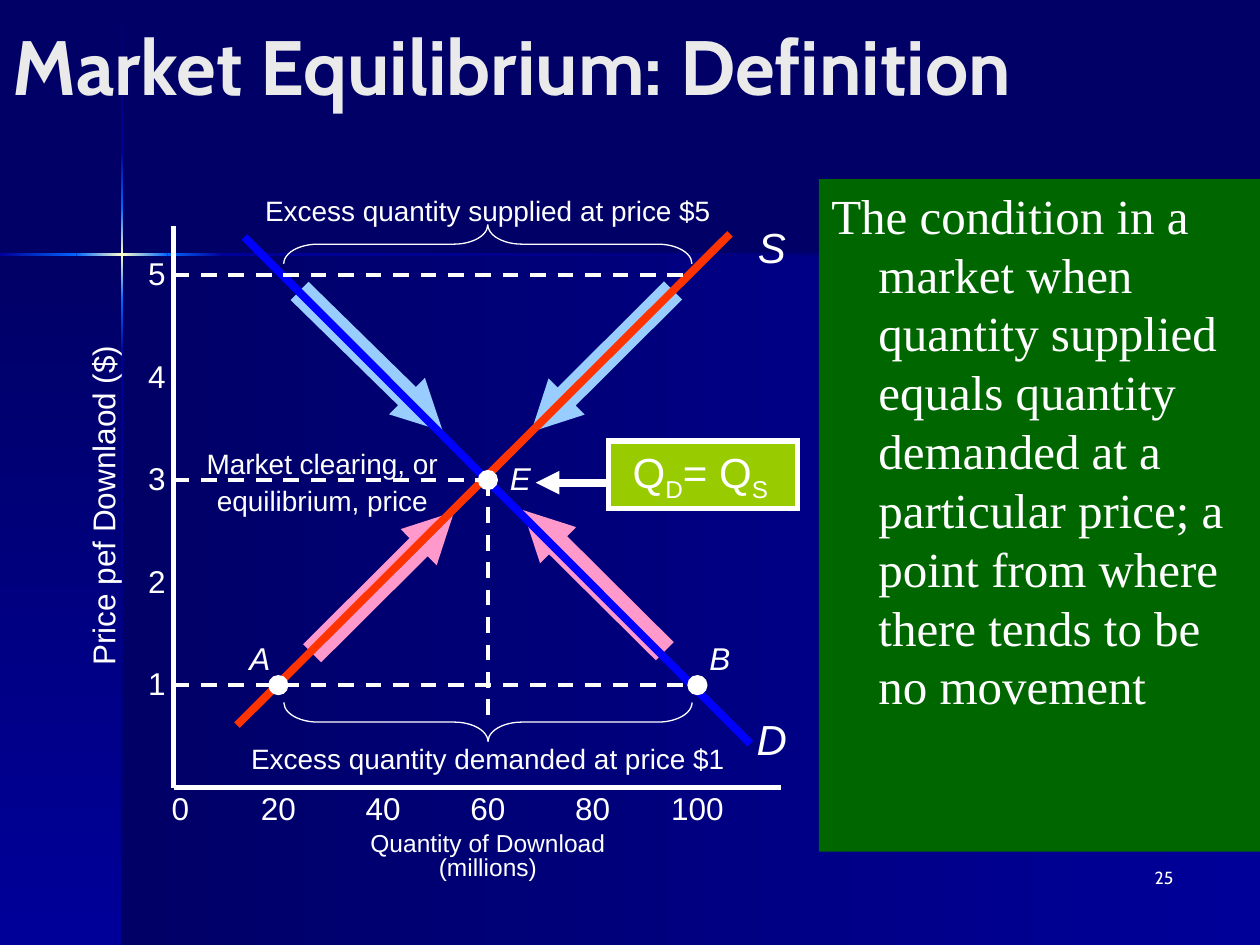
from collections import namedtuple
from copy import deepcopy

from lxml import etree
from pptx import Presentation
from pptx.dml.color import RGBColor
from pptx.enum.dml import MSO_LINE
from pptx.enum.shapes import MSO_CONNECTOR, MSO_SHAPE
from pptx.enum.text import MSO_ANCHOR, MSO_AUTO_SIZE, PP_ALIGN
from pptx.oxml.ns import qn
from pptx.util import Cm, Pt

WHITE = RGBColor(0xFF, 0xFF, 0xFF)
PALE = RGBColor(0xEA, 0xEA, 0xEA)
NAVY = RGBColor(0x00, 0x00, 0x66)
ROYAL = RGBColor(0x00, 0x00, 0x99)
AZURE = RGBColor(0x00, 0x66, 0xFF)
CREAM = RGBColor(0xFF, 0xFF, 0xCC)
SKY = RGBColor(0x99, 0xCC, 0xFF)
PINK = RGBColor(0xFF, 0x99, 0xCC)
RED = RGBColor(0xFF, 0x33, 0x00)
BLUE = RGBColor(0x00, 0x00, 0xFF)
LIME = RGBColor(0x99, 0xCC, 0x00)
GREEN = RGBColor(0x00, 0x66, 0x00)

RECT, OVAL = MSO_SHAPE.RECTANGLE, MSO_SHAPE.OVAL
ARROW, BRACE = MSO_SHAPE.UP_ARROW, MSO_SHAPE.RIGHT_BRACE
STRAIGHT, DASH = MSO_CONNECTOR.STRAIGHT, MSO_LINE.DASH
LEFT, MID, RIGHT = PP_ALIGN.LEFT, PP_ALIGN.CENTER, PP_ALIGN.RIGHT
TOP, CENTRE = MSO_ANCHOR.TOP, MSO_ANCHOR.MIDDLE
FIXED = MSO_AUTO_SIZE.NONE

Box = namedtuple("Box", "x y w h")  # centimetres


def around(x, y, w, h):
    """Box centred on a point."""
    return Box(x - w / 2, y - h / 2, w, h)


def place(item, box):
    item.left, item.top, item.width, item.height = map(Cm, box)


def shape(slide, kind, box, fill=None, line=None, width=0.75, turn=0):
    item = slide.shapes.add_shape(kind, *map(Cm, box))
    item.shadow.inherit = False
    item.rotation = turn
    if fill is None:
        item.fill.background()
    else:
        item.fill.solid()
        item.fill.fore_color.rgb = fill
    if line is None:
        item.line.fill.background()
    else:
        item.line.color.rgb = line
        item.line.width = Pt(width)
        etree.SubElement(item.line._get_or_add_ln(), qn("a:miter"))
    return item


def stroke(slide, start, end, color=WHITE, width=3.0, dash=None, head=False):
    item = slide.shapes.add_connector(STRAIGHT, *map(Cm, start + end))
    item.line.color.rgb = color
    item.line.width = Pt(width)
    if dash:
        item.line.dash_style = dash
    if head:
        tail = etree.SubElement(item.line._get_or_add_ln(), qn("a:tailEnd"))
        tail.set("type", "triangle")
    etree.SubElement(item._element.spPr, qn("a:effectLst"))


def style(frame, size, font="Arial", color=WHITE, align=MID, gap=None,
          bold=False, italic=False):
    for para in frame.paragraphs:
        para.alignment = align
        para.line_spacing = gap
        for run in para.runs:
            run.font.name, run.font.size = font, Pt(size)
            run.font.bold, run.font.italic = bold, italic
            run.font.color.rgb = color


def label(slide, text, x, y, size, width=1.6, turn=0, gap=None, italic=False):
    """One or more lines centred on a point, in a box as tall as they are."""
    rows = text.count("\n") + 1
    tall = 0.25 + rows * size * 0.04 * (gap or 1)
    item = slide.shapes.add_textbox(*map(Cm, around(x, y, width, tall)))
    item.rotation = turn
    frame = item.text_frame
    frame.word_wrap = True
    frame.margin_left = frame.margin_right = 0
    frame.vertical_anchor = CENTRE
    frame.text = text
    style(frame, size, gap=gap, italic=italic)


def blend(slide, box, colors, down=False):
    """Rectangle with evenly spaced gradient stops."""
    item = shape(slide, RECT, box)
    item.fill.gradient()
    item.fill.gradient_angle = 270 if down else 0
    stops = item._element.spPr.find(".//" + qn("a:gsLst"))
    for _ in colors[2:]:
        stops.append(deepcopy(stops[-1]))
    for i, (stop, color) in enumerate(zip(item.fill.gradient_stops, colors)):
        stop.color.rgb = color
        stop.position = i / (len(colors) - 1)


def backdrop(slide, box):
    """Two shaded panels and a glowing cross where they meet."""
    fill = slide.background.fill
    fill.solid()
    fill.fore_color.rgb = NAVY
    across, along, thick = box.x + 2.46, box.y + 5.13, 0.05
    right, foot = box.x + box.w, box.y + box.h
    blend(slide, Box(across, along, right - across, foot - along),
          (NAVY, ROYAL))
    blend(slide, Box(box.x, along, across - box.x, foot - along),
          (NAVY, ROYAL), True)
    glow = (AZURE, CREAM, AZURE)
    tall = ((0, 3.07, (NAVY, ROYAL)), (3.07, 4.19, (ROYAL, AZURE)),
            (4.19, 6.05, glow), (6.05, 7.16, (AZURE, ROYAL)),
            (7.16, box.h, (ROYAL, NAVY)))
    wide = ((0, 1.54, (ROYAL, AZURE)), (1.54, 3.38, glow),
            (3.38, 4.5, (AZURE, ROYAL)), (4.5, box.w, (ROYAL, NAVY)))
    for start, end, colors in tall:
        blend(slide, Box(across - thick / 2, box.y + start, thick,
                         end - start), colors, True)
    for start, end, colors in wide:
        blend(slide, Box(box.x + start, along - thick / 2, end - start,
                         thick), colors)


def heading(slide, box):
    title = slide.shapes.title
    title._element.getparent().append(title._element)  # above the backdrop
    place(title, box)
    frame = title.text_frame
    frame.text = "Market Equilibrium: Definition"
    frame.auto_size = FIXED
    frame.vertical_anchor = CENTRE
    style(frame, 44, "Cabin", PALE, LEFT, bold=True)


def market(slide, box):
    """Supply and demand diagram; the box is the area between the axes."""
    foot = box.y + box.h

    def at(amount, price):
        return (box.x + amount * box.w / 116, foot - price * box.h / 5.48)

    for amount, price, turn, color in ((37.7, 4.16, 134.4, SKY),
                                       (81.8, 4.16, 225.1, SKY),
                                       (80.2, 2.02, 314.8, PINK),
                                       (40, 2, 45.1, PINK)):
        arrow = shape(slide, ARROW, around(*at(amount, price), 1.03, 4.04),
                      color, turn=turn)
        arrow.adjustments[1] = 0.98
    stroke(slide, at(12.1, 0.61), at(106.2, 5.4), RED, 4.5)
    stroke(slide, at(13.5, 5.37), at(110.1, 0.43), BLUE, 4.5)

    stroke(slide, (box.x, box.y), (box.x, foot))
    stroke(slide, (box.x, foot), (box.x + box.w, foot))
    for price in range(1, 6):
        label(slide, str(price), *at(-3.2, price + 0.02), 18)
    for amount in range(0, 101, 20):
        label(slide, str(amount), *at(amount or 1.3, -0.2), 18)
    label(slide, "Quantity of Download\n(millions)", *at(60, -0.68), 14, 5.3,
          gap=0.8)
    label(slide, "Price pef Downlaod ($)", *at(-13.5, 2.75), 18, 7.1, 270)

    for start, end in (((0, 5), (98, 5)), ((0, 1), (98, 1)),
                       ((0, 3), (60, 3)), ((60, 3), (60, 0.68))):
        stroke(slide, at(*start), at(*end), width=2.25, dash=DASH)
    for turn, level, text, line in (
            (270, 5.3, "Excess quantity supplied at price $5", 5.63),
            (90, 0.64, "Excess quantity demanded at price $1", 0.29)):
        brace = shape(slide, BRACE, around(*at(60, level), 0.79, 8.23),
                      line=WHITE, turn=turn)
        brace.adjustments[0] = 0.87
        label(slide, text, *at(60, line), 16, 10.1)
    label(slide, "Market clearing, or\nequilibrium, price", *at(28.4, 3), 16,
          5.2, gap=1.1)
    for point in ((20, 1), (100, 1), (60, 3)):
        shape(slide, OVAL, around(*at(*point), 0.38, 0.38), WHITE, WHITE)
    for text, amount, price, size in (
            ("S", 114.2, 5.28, 24), ("D", 114.2, 0.48, 24),
            ("A", 16.5, 1.27, 18), ("B", 104.3, 1.27, 18),
            ("E", 66.2, 3.02, 18)):
        label(slide, text, *at(amount, price), size, italic=True)


def balance(slide, box):
    """Boxed equation with an arrow to the equilibrium point."""
    frame = shape(slide, RECT, box, LIME, WHITE, 3).text_frame
    frame.vertical_anchor = CENTRE
    para = frame.paragraphs[0]
    for i, text in enumerate((" Q", "D", "= Q", "S")):
        run = para.add_run()
        run.text = text
        if i % 2:
            run.font._element.set("baseline", "-25000")
    style(frame, 24, align=LEFT)
    y = box.y + 0.84
    stroke(slide, (box.x, y), (box.x - 1.47, y), width=4.5, head=True)


def meaning(slide, box):
    frame = shape(slide, RECT, box, GREEN).text_frame
    frame.word_wrap = True
    frame.vertical_anchor = TOP
    frame.text = ("The condition in a market when quantity supplied equals "
                  "quantity demanded at a particular price; a point from "
                  "where there tends to be no movement")
    style(frame, 28, "Times New Roman", align=LEFT)
    props = frame.paragraphs[0]._p.get_or_add_pPr()
    props.set("marL", str(Cm(0.95)))
    props.set("indent", str(-Cm(0.95)))


def number(slide, box):
    frame = slide.shapes.add_textbox(*map(Cm, box)).text_frame
    frame.word_wrap = True
    frame.text = "25"
    style(frame, 10, "Cabin", align=RIGHT)


def main():
    deck = Presentation()
    deck.slide_width, deck.slide_height = Cm(25.4), Cm(19.05)
    slide = deck.slides.add_slide(deck.slide_layouts[5])
    backdrop(slide, Box(0, 0, 25.4, 19.05))
    number(slide, Box(18.62, 17.35, 5.28, 1.27))
    heading(slide, Box(0, 0, 25.4, 2.62))
    market(slide, Box(3.5, 4.55, 12.25, 11.33))
    balance(slide, Box(12.27, 8.89, 3.81, 1.37))
    meaning(slide, Box(16.51, 3.61, 8.89, 13.56))
    deck.save("out.pptx")


if __name__ == "__main__":
    main()
